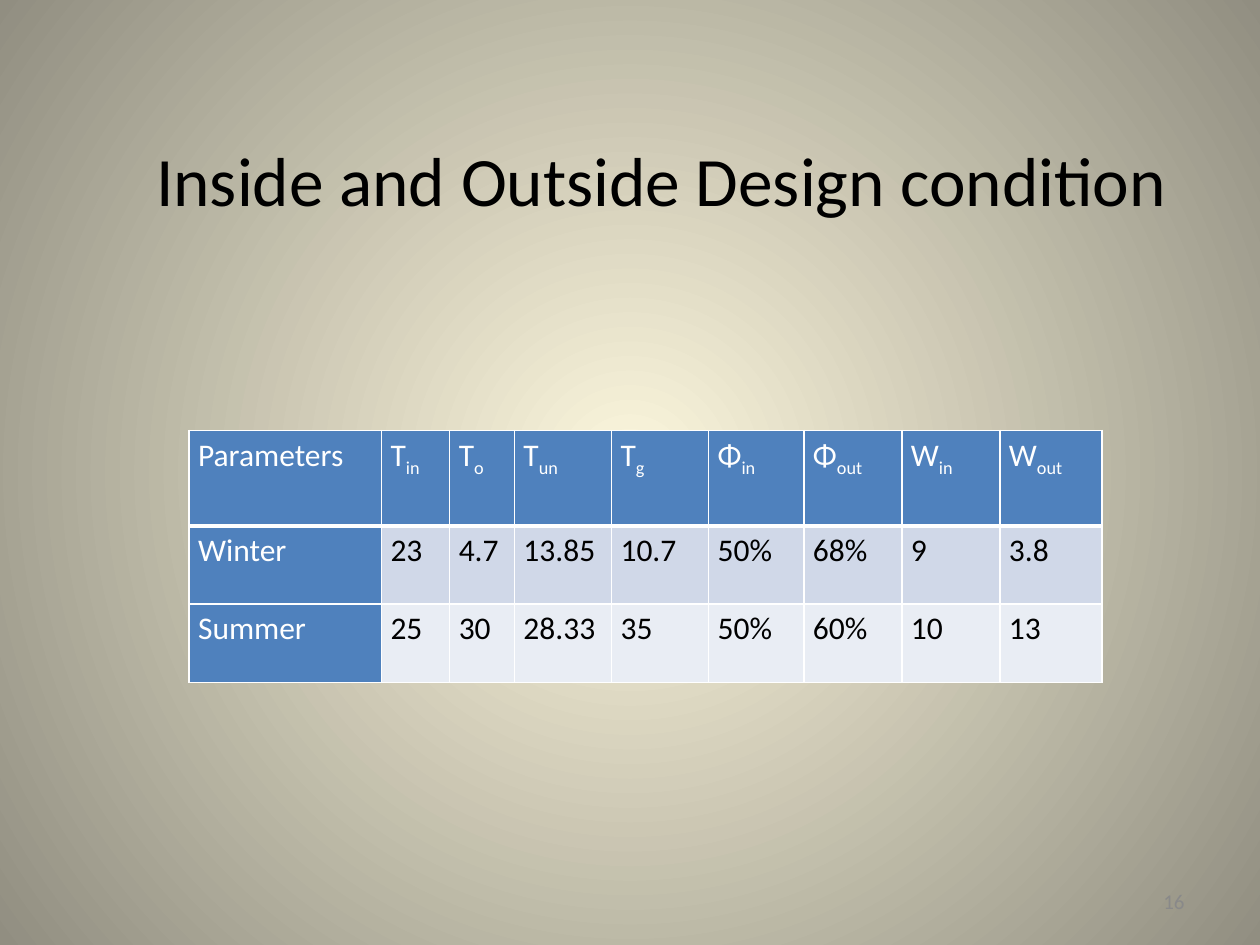
from lxml.etree import SubElement
from pptx import Presentation
from pptx.dml.color import RGBColor
from pptx.enum.text import MSO_ANCHOR as Anchor, PP_ALIGN as Align
from pptx.oxml.ns import qn
from pptx.util import Pt

FONT = "Calibri"
BLACK, WHITE, GREY = "000000", "FFFFFF", "898989"
HEADER_BLUE = "4F81BD"
BAND_FILLS = ["D0D8E8", "E9EDF4"]

COLUMN_WIDTHS = [110, 39, 37, 55.5, 55.5, 54.5, 56, 56, 58.5]
ROW_HEIGHTS = [54.6, 44.7, 44.7]
# Each heading is a symbol and its subscript
HEADINGS = [("Parameters", ""), ("T", "in"), ("T", "o"), ("T", "un"), ("T", "g"),
            ("Φ", "in"), ("Φ", "out"), ("W", "in"), ("W", "out")]
SEASONS = [
    ["Winter", "23", "4.7", "13.85", "10.7", "50%", "68%", "9", "3.8"],
    ["Summer", "25", "30", "28.33", "35", "50%", "60%", "10", "13"],
]


def rgb(color):
    return RGBColor.from_string(color)


def format_run(run, size, color):
    run.font.name = FONT
    run.font.size = Pt(size)
    run.font.color.rgb = rgb(color)


def set_background(slide, inner, outer):
    """Fill the background with a circular gradient from the centre."""
    fill = slide.background.fill
    fill.gradient()
    for stop, position, color in zip(fill.gradient_stops, (0, 1), (inner, outer)):
        stop.position = position
        stop.color.rgb = rgb(color)
    gradient = slide.background._cSld.find(".//" + qn("a:gradFill"))
    gradient.remove(gradient.find(qn("a:lin")))
    circle = SubElement(gradient, qn("a:path"), path="circle")
    SubElement(circle, qn("a:fillToRect"), l="50000", t="50000", r="50000", b="50000")


def add_text(slide, text, left, top, width, height, size, color, align):
    shape = slide.shapes.add_textbox(Pt(left), Pt(top), Pt(width), Pt(height))
    text_frame = shape.text_frame
    text_frame.word_wrap = True
    text_frame.vertical_anchor = Anchor.MIDDLE
    text_frame.text = text
    paragraph = text_frame.paragraphs[0]
    paragraph.alignment = align
    format_run(paragraph.runs[0], size, color)


def set_borders(cell, bottom_width):
    properties = cell._tc.get_or_add_tcPr()
    for side, width in [("L", 1), ("R", 1), ("T", 1), ("B", bottom_width)]:
        line = SubElement(properties, qn(f"a:ln{side}"), w=str(Pt(width)))
        solid = SubElement(line, qn("a:solidFill"))
        SubElement(solid, qn("a:srgbClr"), val=WHITE)


def format_cell(cell, text, subscript, fill, color, bottom_width):
    set_borders(cell, bottom_width)
    cell.fill.solid()
    cell.fill.fore_color.rgb = rgb(fill)
    cell.margin_left = cell.margin_right = Pt(5.2)
    cell.margin_top = cell.margin_bottom = 0
    paragraph = cell.text_frame.paragraphs[0]
    paragraph.text = text
    paragraph.line_spacing = 1.15
    if subscript:
        run = paragraph.add_run()
        run.text = subscript
        run._r.get_or_add_rPr().set("baseline", "-25000")
    for run in paragraph.runs:
        format_run(run, 18, color)


def add_conditions_table(slide, left, top):
    rows = [HEADINGS] + [[(value, "") for value in season] for season in SEASONS]
    frame = slide.shapes.add_table(len(rows), len(HEADINGS), Pt(left), Pt(top),
                                   Pt(sum(COLUMN_WIDTHS)), Pt(sum(ROW_HEIGHTS)))
    table = frame.table
    table.first_row = table.horz_banding = False
    for column, width in zip(table.columns, COLUMN_WIDTHS):
        column.width = Pt(width)
    for row, height in zip(table.rows, ROW_HEIGHTS):
        row.height = Pt(height)

    for row_index, row in enumerate(rows):
        for column_index, (text, subscript) in enumerate(row):
            is_heading = row_index == 0 or column_index == 0
            fill = HEADER_BLUE if is_heading else BAND_FILLS[row_index - 1]
            format_cell(table.cell(row_index, column_index), text, subscript, fill,
                        WHITE if is_heading else BLACK,
                        3 if row_index == 0 else 1)


def main():
    presentation = Presentation()
    presentation.slide_width, presentation.slide_height = Pt(720), Pt(540)
    slide = presentation.slides.add_slide(presentation.slide_layouts[6])
    set_background(slide, "FCF7DD", "918E81")

    # Title
    add_text(slide, "Inside and Outside Design condition",
             72, 66, 612, 72, 39.6, BLACK, Align.CENTER)
    # Design conditions by season
    add_conditions_table(slide, 108, 246)
    # Slide number
    add_text(slide, "16", 516, 500.5, 168, 28.75, 12, GREY, Align.RIGHT)

    presentation.save("out.pptx")


if __name__ == "__main__":
    main()
